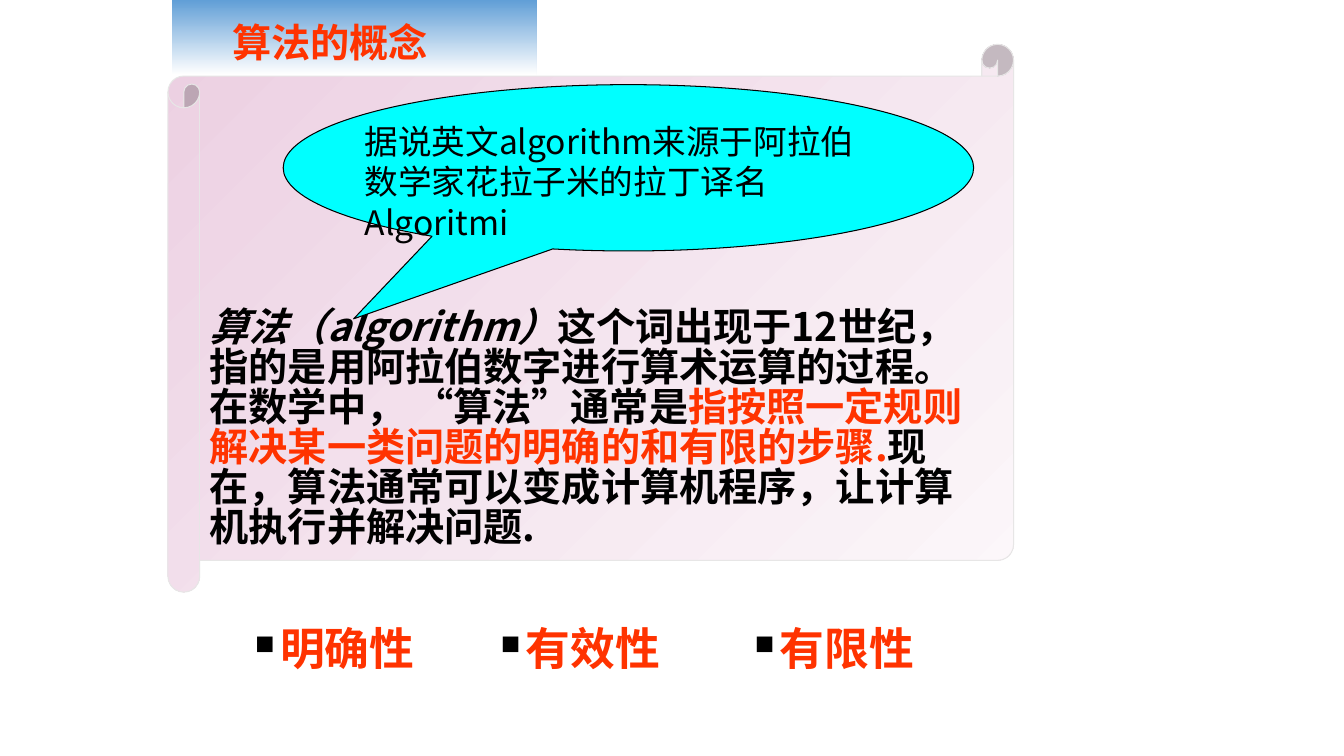
from lxml.etree import SubElement
from pptx import Presentation
from pptx.dml.color import RGBColor
from pptx.enum.shapes import MSO_SHAPE
from pptx.enum.text import MSO_ANCHOR, MSO_AUTO_SIZE, PP_ALIGN
from pptx.oxml.ns import qn
from pptx.util import Pt

BLACK, RED = "000000", "FF3300"


def paint(color):
    return RGBColor.from_string(color)


def write(par, text, font="Noto Sans CJK SC", size=28, color=BLACK,
          bold=False, italic=False):
    run = par.add_run()
    run.text = text
    face = run.font
    face.name, face.size, face.bold, face.italic = font, Pt(size), bold, italic
    face.color.rgb = paint(color)
    SubElement(face._element, qn("a:ea"), typeface=font)


def indent(par, left, first=0):
    props = par._p.get_or_add_pPr()
    props.set("marL", str(Pt(left)))
    props.set("indent", str(Pt(first)))
    return props


def bullet(par, sign, color, percent):
    props = indent(par, 36, -18)
    tint = SubElement(props, qn("a:buClr"))
    SubElement(tint, qn("a:srgbClr"), val=color)
    SubElement(props, qn("a:buSzPct"), val=str(percent * 1000))
    SubElement(props, qn("a:buChar"), char=sign)


class Page:
    def __init__(self, slide):
        self.shapes = slide.shapes

    def shape(self, kind, box, fill, angle=0, line=None, adjust=()):
        """Fill is one colour, or a pair of colours for a gradient."""
        item = self.shapes.add_shape(kind, *map(Pt, box))
        item.shadow.inherit = False
        for i, value in enumerate(adjust):
            item.adjustments[i] = value
        if isinstance(fill, str):
            item.fill.solid()
            item.fill.fore_color.rgb = paint(fill)
        else:
            item.fill.gradient()
            item.fill.gradient_angle = 360 - angle
            for stop, color in zip(item.fill.gradient_stops, fill):
                stop.color.rgb = paint(color)
        if line:
            item.line.color.rgb = paint(line)
            item.line.width = Pt(0.75)
        else:
            item.line.fill.background()
        return item

    def text(self, box, wrap=True):
        """Add a text box and return its first paragraph."""
        frame = self.shapes.add_textbox(*map(Pt, box)).text_frame
        frame.word_wrap = wrap
        frame.auto_size = MSO_AUTO_SIZE.SHAPE_TO_FIT_TEXT
        return frame.paragraphs[0]

    def inner(self, item, anchor, top=3.6, bottom=3.6):
        """Set up the text of a shape and return its first paragraph."""
        frame = item.text_frame
        frame.word_wrap = True
        frame.vertical_anchor = anchor
        frame.margin_top, frame.margin_bottom = Pt(top), Pt(bottom)
        par = frame.paragraphs[0]
        par.alignment = PP_ALIGN.LEFT
        return par


def main():
    deck = Presentation()
    deck.slide_width, deck.slide_height = Pt(960), Pt(540)
    page = Page(deck.slides.add_slide(deck.slide_layouts[6]))

    scroll = page.shape(MSO_SHAPE.HORIZONTAL_SCROLL, (120, 31.7, 604, 391.3),
                        ("ECD0E2", "FCF7FA"), angle=45, line="E7E6E6",
                        adjust=[0.058])
    par = page.inner(scroll, MSO_ANCHOR.BOTTOM, bottom=7.6)
    par.line_spacing = 0.85
    par._p.get_or_add_pPr().set("hangingPunct", "0")
    for text, color, italic in (
            ("算法（algorithm）", BLACK, True),
            ("这个词出现于12世纪，指的是用阿拉伯数字进行算术运算的过程。"
             "在数学中， “算法”通常是", BLACK, False),
            ("指按照一定规则解决某一类问题的明确的和有限的步骤.", RED, False),
            ("现在，算法通常可以变成计算机程序，让计算机执行并解决问题.",
             BLACK, False)):
        write(par, text, font="Noto Sans CJK JP", color=color, bold=True,
              italic=italic)

    page.shape(MSO_SHAPE.OVAL_CALLOUT, (202.3, 60.5, 493.2, 118.8), "00FFFF",
               line=BLACK, adjust=[-0.398, 0.908])
    par = page.text((253.4, 82.8, 374.4, 64.8))
    write(par, "据说英文algorithm来源于阿拉伯数学家花拉子米的拉丁译名Algoritmi",
          size=24)

    title = page.shape(MSO_SHAPE.RECTANGLE, (122.8, -2, 260.6, 55.4),
                       ("5B9BD5", "FFFFFF"), angle=90)
    par = page.inner(title, MSO_ANCHOR.MIDDLE, top=12)
    indent(par, 36)
    write(par, "算法的概念", color=RED, bold=True)

    for left, trait in ((157, "明确性"), (332.6, "有效性"), (514, "有限性")):
        par = page.text((left, 440, 160.6, 45.4), wrap=False)
        par.level = 1
        bullet(par, "■", BLACK, 60)
        write(par, trait, font="Lato", size=32, color=RED, bold=True)

    deck.save("out.pptx")


if __name__ == "__main__":
    main()
